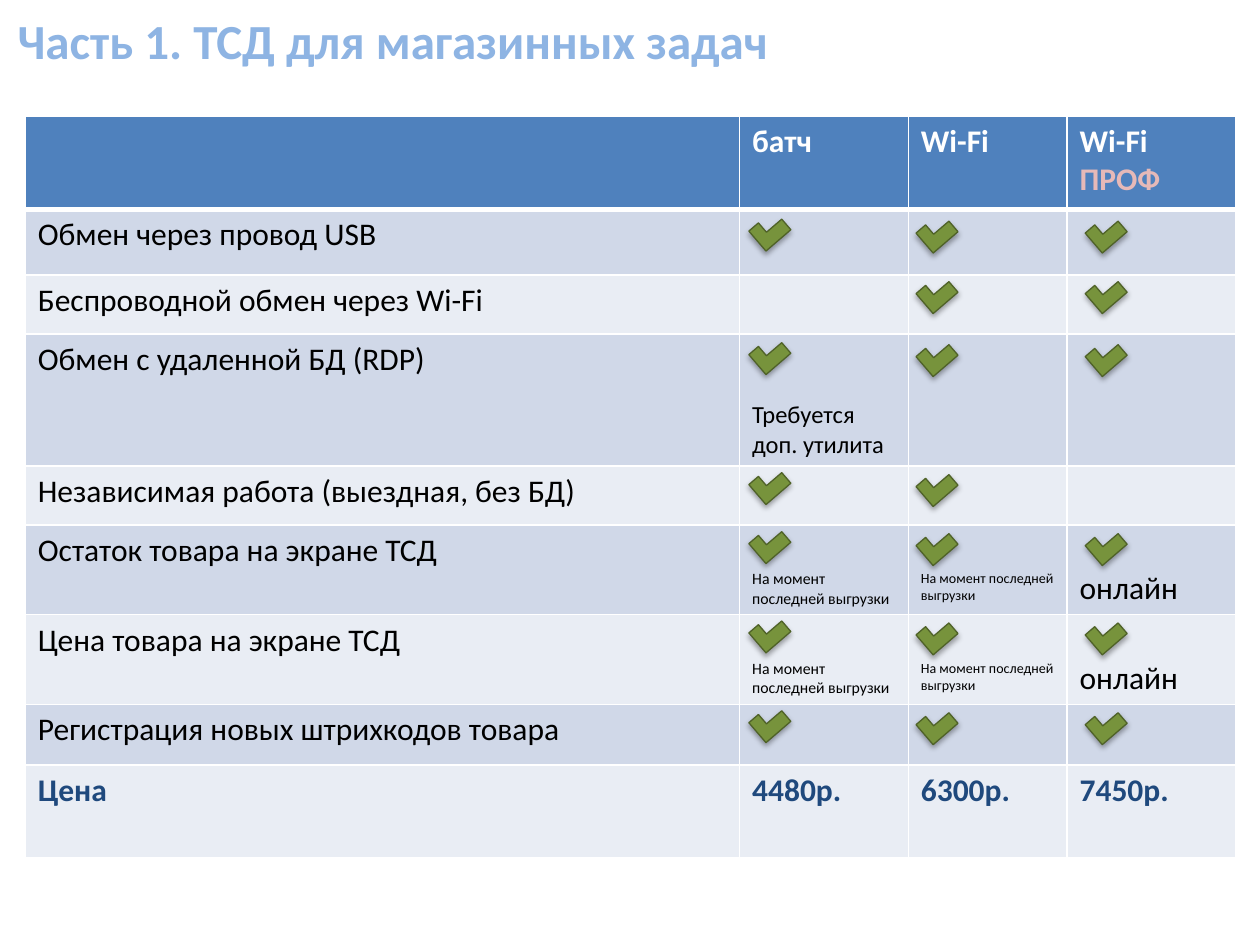
from lxml.etree import SubElement
from pptx import Presentation
from pptx.dml.color import RGBColor
from pptx.enum.shapes import MSO_SHAPE
from pptx.enum.text import MSO_ANCHOR, PP_ALIGN
from pptx.oxml.ns import qn
from pptx.util import Cm, Pt

FONT = "Calibri"
WHITE, BLACK, NAVY = "FFFFFF", "000000", "1F497D"
HEADER_FILL, BANDS = "4F81BD", ("D0D8E8", "E9EDF4")
TEXT_SIZE = 18
LINE = 1.22  # line height of the font, relative to its size

COL_WIDTHS = [14.4, 3.4, 3.2, 3.4]
CHECK_SHIFTS = [(0.28, -0.04), (0.25, 0), (0.46, 0)]

# A note is (text, size, number of lines left free above it, size of those lines)
UTILITY = ("Требуется доп. утилита", 14, 2, 14)
AS_OF_BATCH = ("На момент последней выгрузки", 9, 1, 18)
AS_OF_WIFI = ("На момент последней выгрузки", 8, 1, 18)
ONLINE = ("онлайн", 18, 1, 18)
STOCK_NOTES = [AS_OF_BATCH, AS_OF_WIFI, ONLINE]

HEADER_HEIGHT = 1.88
HEADERS = [[], [("батч", WHITE)], [("Wi-Fi", WHITE)],
           [("Wi-Fi ", WHITE), ("ПРОФ", "E6B9B8")]]
# label, row height, check marks per column, check offset from row top, notes
FEATURES = [
    ("Обмен через провод USB", 1.32, (1, 1, 1), 0.2, []),
    ("Беспроводной обмен через Wi-Fi", 1.19, (0, 1, 1), 0.1, []),
    ("Обмен с удаленной БД (RDP)", 2.64, (1, 1, 1), 0.18, [UTILITY]),
    ("Независимая работа (выездная, без БД)", 1.19, (1, 1, 0), 0.16, []),
    ("Остаток товара на экране ТСД", 1.78, (1, 1, 1), 0.16, STOCK_NOTES),
    ("Цена товара на экране ТСД", 1.78, (1, 1, 1), 0.18, STOCK_NOTES),
    ("Регистрация новых штрихкодов товара", 1.22, (1, 1, 1), 0.21, []),
]
PRICE_HEIGHT = 1.88
PRICES = ["Цена", "4480р.", "6300р.", "7450р."]


def rgb(value):
    return RGBColor.from_string(value)


def add_run(p, text, size, color, bold=False):
    r = p.add_run()
    r.text = text
    r.font.name, r.font.size, r.font.bold = FONT, Pt(size), bold
    r.font.color.rgb = rgb(color)


def set_borders(cell, top=1, bottom=1):
    """White borders; they must come before the cell's fill."""
    tc_pr = cell._tc.get_or_add_tcPr()
    for tag, width in (("lnL", 1), ("lnR", 1), ("lnT", top), ("lnB", bottom)):
        ln = SubElement(tc_pr, qn("a:" + tag), w=str(Pt(width)))
        fill = SubElement(ln, qn("a:solidFill"))
        SubElement(fill, qn("a:srgbClr"), val=WHITE)


def add_title(slide, text, left, top, width, height):
    s = slide.shapes.title
    s.left, s.top, s.width, s.height = Cm(left), Cm(top), Cm(width), Cm(height)
    tf = s.text_frame
    tf.word_wrap = True
    tf.vertical_anchor = MSO_ANCHOR.TOP
    p = tf.paragraphs[0]
    p.alignment = PP_ALIGN.LEFT
    add_run(p, text, 28, "8EB4E3", True)


def add_check(slide, left, top):
    s = slide.shapes.add_shape(MSO_SHAPE.CORNER, Cm(left), Cm(top), Cm(0.66), Cm(0.53))
    s.adjustments[0], s.adjustments[1] = 0.53, 0.48
    s.rotation = 319.4
    s.fill.solid()
    s.fill.fore_color.rgb = rgb("77933C")
    s.line.color.rgb = rgb("4F6228")
    s.line.width = Pt(0.75)
    s.shadow.inherit = False
    effects = s._element.spPr.find(qn("a:effectLst"))
    shadow = SubElement(effects, qn("a:outerShdw"), blurRad=str(Pt(3.1)),
                        dist=str(Pt(1.8)), dir="5400000", rotWithShape="0")
    color = SubElement(shadow, qn("a:srgbClr"), val=BLACK)
    SubElement(color, qn("a:alpha"), val="35000")


def add_note(cell, text, size, free_lines, free_size):
    cell.margin_top = Cm(0.13) + Pt(free_lines * free_size * LINE)
    add_run(cell.text_frame.paragraphs[0], text, size, BLACK)


def add_comparison(slide, left, top):
    heights = [HEADER_HEIGHT, *(f[1] for f in FEATURES), PRICE_HEIGHT]
    table = slide.shapes.add_table(
        len(heights), len(COL_WIDTHS), Cm(left), Cm(top),
        Cm(sum(COL_WIDTHS)), Cm(sum(heights))).table
    for col, width in zip(table.columns, COL_WIDTHS):
        col.width = Cm(width)
    for i, (row, height) in enumerate(zip(table.rows, heights)):
        row.height = Cm(height)
        for cell in row.cells:
            set_borders(cell, top=3 if i == 1 else 1, bottom=3 if i == 0 else 1)
            cell.fill.solid()
            cell.fill.fore_color.rgb = rgb(BANDS[(i - 1) % 2] if i else HEADER_FILL)

    for col, runs in enumerate(HEADERS):
        for text, color in runs:
            add_run(table.cell(0, col).text_frame.paragraphs[0],
                    text, TEXT_SIZE, color, True)
    for i, (label, _, _, _, notes) in enumerate(FEATURES, 1):
        add_run(table.cell(i, 0).text_frame.paragraphs[0], label, TEXT_SIZE, BLACK)
        for col, note in enumerate(notes, 1):
            add_note(table.cell(i, col), *note)
    for col, text in enumerate(PRICES):
        add_run(table.cell(len(heights) - 1, col).text_frame.paragraphs[0],
                text, TEXT_SIZE, NAVY, True)

    for i, (_, _, checks, offset, _) in enumerate(FEATURES, 1):
        row_top = top + sum(heights[:i])
        for col, (checked, (dx, dy)) in enumerate(zip(checks, CHECK_SHIFTS), 1):
            if checked:
                add_check(slide, left + sum(COL_WIDTHS[:col]) + dx, row_top + offset + dy)


def main():
    prs = Presentation()
    prs.slide_width, prs.slide_height = Cm(25.4), Cm(19.05)
    slide = prs.slides.add_slide(prs.slide_layouts[5])
    add_title(slide, "Часть 1. ТСД для магазинных задач", 0.1, 0.08, 25.4, 1.45)
    add_comparison(slide, 0.51, 2.34)
    prs.save("out.pptx")


if __name__ == "__main__":
    main()
